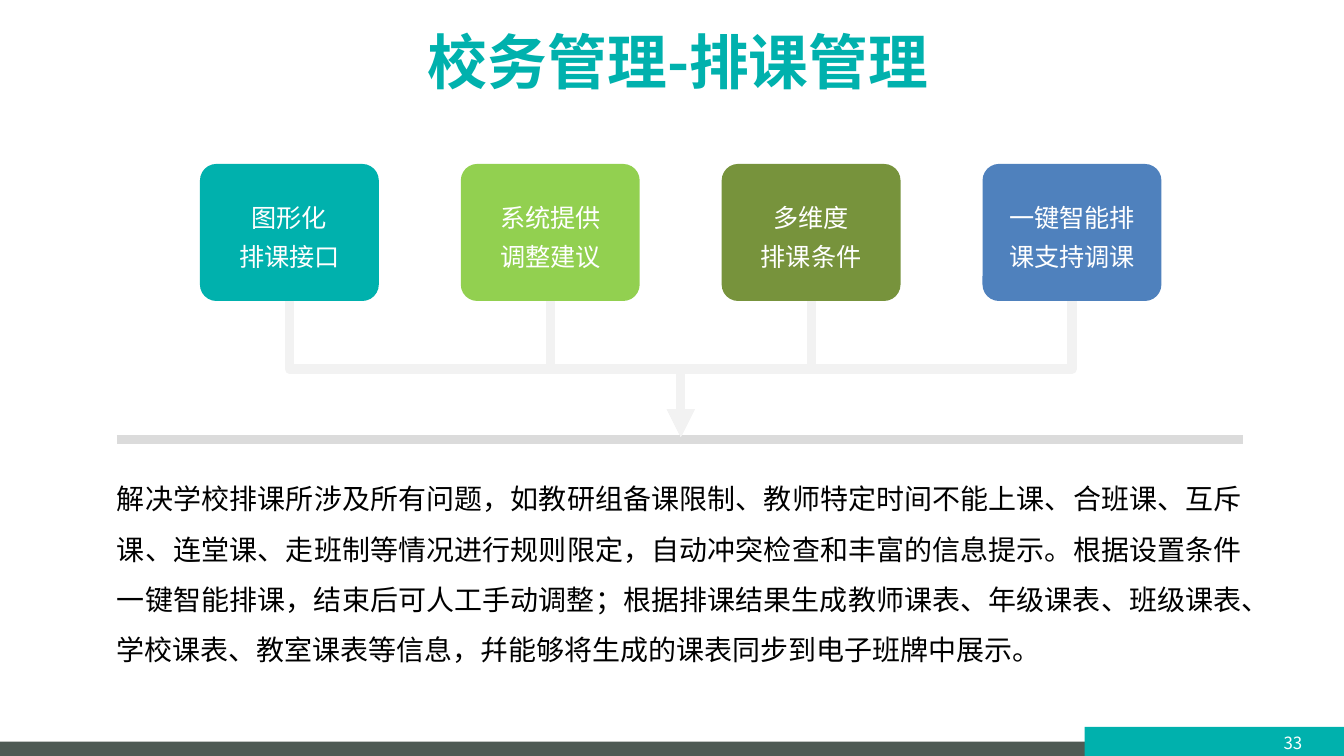
from lxml import etree
from pptx import Presentation
from pptx.dml.color import RGBColor
from pptx.enum.shapes import MSO_CONNECTOR as CONN, MSO_SHAPE as SHAPE
from pptx.enum.text import MSO_ANCHOR as ANCHOR, PP_ALIGN as ALIGN
from pptx.oxml.ns import qn
from pptx.util import Cm, Pt

FONT = "Noto Sans CJK SC"
COLORS = {
    "teal": "00B1AD", "lime": "92D050", "olive": "77933C", "blue": "4F81BD",
    "slate": "4E5A54", "rule": "DBDBDB", "arrow": "F2F2F2",
    "white": "FFFFFF", "black": "000000",
}
CARDS = [
    ("图形化\n排课接口", "teal"),
    ("系统提供\n调整建议", "lime"),
    ("多维度\n排课条件", "olive"),
    ("一键智能排\n课支持调课", "blue"),
]
BODY = (
    "解决学校排课所涉及所有问题，如教研组备课限制、教师特定时间不能上课、合班课、互斥课、"
    "连堂课、走班制等情况进行规则限定，自动冲突检查和丰富的信息提示。根据设置条件一键智能排课，"
    "结束后可人工手动调整；根据排课结果生成教师课表、年级课表、班级课表、学校课表、教室课表等信息，"
    "幷能够将生成的课表同步到电子班牌中展示。"
)
CARD_X, CARD_Y, CARD_W, CARD_H, PITCH = 3.78, 3.1, 3.38, 2.59, 4.93
LEFT, RIGHT, RULE_Y, ARROW_Y = 2.21, 23.5, 8.31, 8.26


def rgb(name):
    return RGBColor.from_string(COLORS[name])


def write(sp, text, size, color, bold=False, align=ALIGN.CENTER, spacing=None,
          margins=(0.25, 0.13)):
    tf = sp.text_frame
    tf.word_wrap = True
    tf.vertical_anchor = ANCHOR.MIDDLE
    tf.margin_left = tf.margin_right = Cm(margins[0])
    tf.margin_top = tf.margin_bottom = Cm(margins[1])
    for i, line in enumerate(text.split("\n")):
        p = tf.add_paragraph() if i else tf.paragraphs[0]
        p.alignment = align
        p.line_spacing = spacing
        r = p.add_run()
        r.text = line
        r.font.size, r.font.bold, r.font.name = Pt(size), bold, FONT
        r.font.color.rgb = rgb(color)
        ea = etree.Element(qn("a:ea"), typeface=FONT)
        r.font._element.find(qn("a:latin")).addnext(ea)


class Deck:
    def __init__(self, prs):
        self.s = prs.slides.add_slide(prs.slide_layouts[5])

    def title(self, text, x, y, w, h, **style):
        sp = self.s.shapes.title
        sp.left, sp.top, sp.width, sp.height = Cm(x), Cm(y), Cm(w), Cm(h)
        write(sp, text, **style)

    def box(self, x, y, w, h, color, kind=SHAPE.RECTANGLE):
        sp = self.s.shapes.add_shape(kind, Cm(x), Cm(y), Cm(w), Cm(h))
        sp.shadow.inherit = False
        sp.fill.solid()
        sp.fill.fore_color.rgb = rgb(color)
        sp.line.fill.background()
        return sp

    def card(self, x, text, color):
        sp = self.box(x, CARD_Y, CARD_W, CARD_H, color, SHAPE.ROUNDED_RECTANGLE)
        sp.adjustments[0] = 0.12
        write(sp, text, size=13.5, color="white", spacing=1.3, margins=(0, 0))

    def text(self, text, x, y, w, h, **style):
        sp = self.s.shapes.add_textbox(Cm(x), Cm(y), Cm(w), Cm(h))
        write(sp, text, **style)

    def line(self, x1, y1, x2, y2, color, kind=CONN.STRAIGHT):
        c = self.s.shapes.add_connector(kind, Cm(x1), Cm(y1), Cm(x2), Cm(y2))
        c.line.width = Pt(5)
        c.line.color.rgb = rgb(color)
        etree.SubElement(c._element.spPr, qn("a:effectLst"))
        return c

    def down_arrow(self, x1, y1, x2, y2):
        cx, cy = (x1 + x2) / 2, (y1 + y2) / 2
        half_w, half_h = (y2 - y1) / 2, abs(x2 - x1) / 2
        rightward = x2 > x1
        if rightward:
            half_w = -half_w
        c = self.line(cx - half_w, cy - half_h, cx + half_w, cy + half_h,
                      "arrow", CONN.ELBOW)
        angle = 270 if rightward else 90
        c._element.spPr.find(qn("a:xfrm")).set("rot", str(angle * 60000))
        ln = c._element.spPr.find(qn("a:ln"))
        etree.SubElement(ln, qn("a:tailEnd"), type="triangle")


def main():
    prs = Presentation()
    prs.slide_width, prs.slide_height = Cm(25.4), Cm(14.29)
    deck = Deck(prs)

    deck.box(0, 14.02, 25.4, 0.27, "slate")
    deck.box(20.5, 13.74, 4.9, 0.55, "teal")
    deck.title("校务管理-排课管理", 1.5, -0.05, 22.63, 2.39,
               size=32, color="teal", bold=True)
    deck.text("33", 23.7, 13.67, 1.47, 0.76, size=9, color="white")

    deck.line(LEFT, RULE_Y, RIGHT, RULE_Y, "rule")
    target = CARD_X + CARD_W / 2 + PITCH * (len(CARDS) - 1) / 2
    for i, (text, color) in enumerate(CARDS):
        x = CARD_X + i * PITCH
        deck.card(x, text, color)
        deck.down_arrow(x + CARD_W / 2, CARD_Y + CARD_H, target, ARROW_Y)

    deck.text(BODY, LEFT, 8.64, RIGHT - LEFT, 4.11, size=15, color="black",
              align=ALIGN.JUSTIFY, spacing=1.5, margins=(0, 0.13))
    prs.save("out.pptx")


if __name__ == "__main__":
    main()
